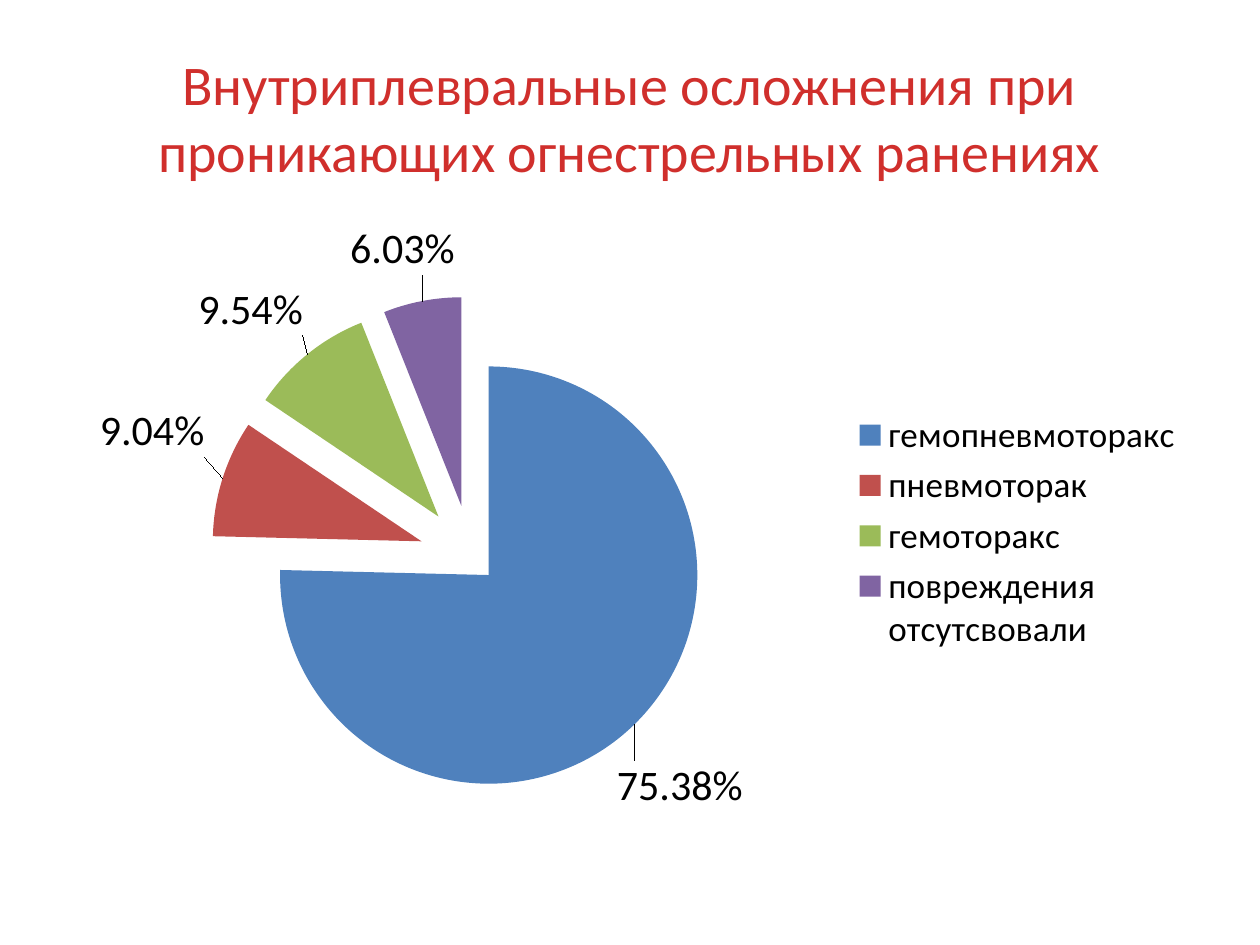
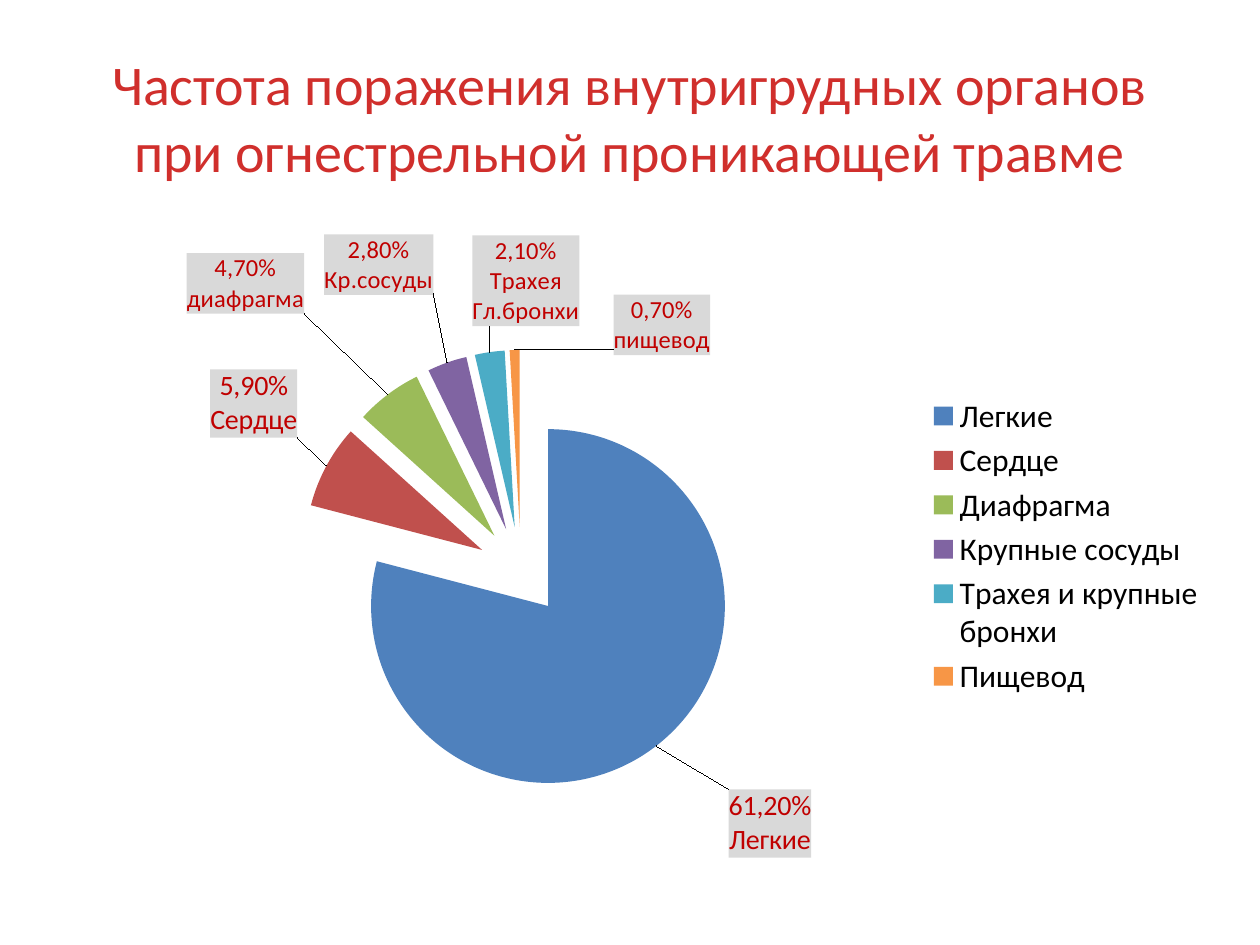
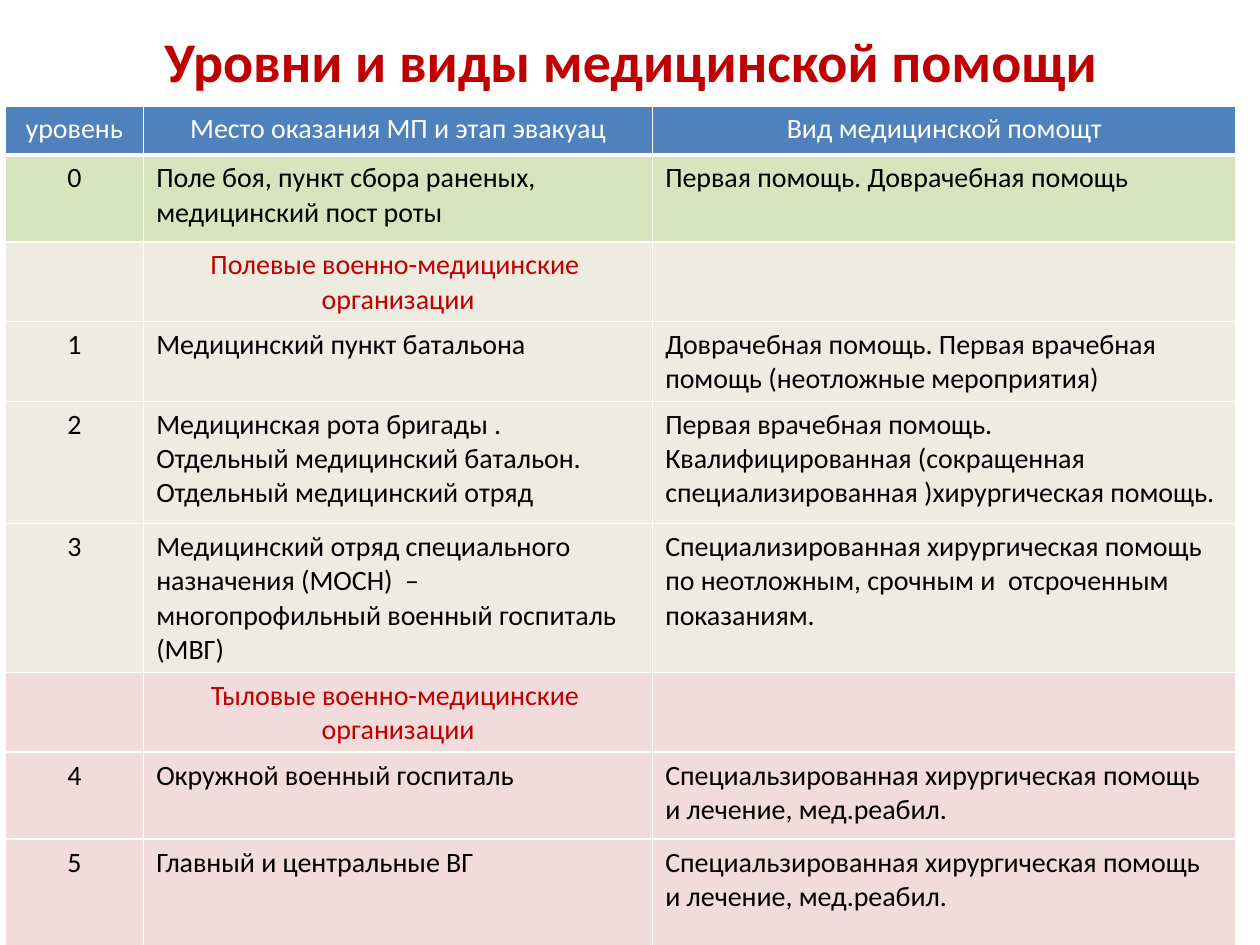
from lxml import etree
from pptx import Presentation
from pptx.chart.data import CategoryChartData
from pptx.dml.color import RGBColor
from pptx.enum.chart import XL_CHART_TYPE as ChartType
from pptx.enum.chart import XL_LABEL_POSITION as LabelPos
from pptx.enum.chart import XL_LEGEND_POSITION as LegendPos
from pptx.enum.text import MSO_ANCHOR as Anchor
from pptx.enum.text import PP_ALIGN as Align
from pptx.oxml import parse_xml
from pptx.oxml.ns import nsdecls, qn
from pptx.util import Inches, Pt

COLORS = {
    "black": "000000", "white": "FFFFFF", "title": "D02F2C", "accent": "C00000",
    "label": "D9D9D9", "header": "4F81BD", "battlefield": "D7E4BD",
    "field": "EEECE1", "rear": "F2DCDB",
}
SLICES = ["4F81BD", "C0504D", "9BBB59", "8064A2", "4BACC6", "F79646"]
FONT = "Calibri"


def rgb(name):
    return RGBColor.from_string(COLORS[name])


def layout_xml(mode="", **parts):
    """Manual chart layout; parts are fractions of the chart."""
    modes = '<c:layoutTarget val="inner"/>' if mode else ""
    modes += "".join(f'<c:{p}Mode val="{mode}"/>' for p in "xy" if mode)
    values = "".join(f'<c:{p} val="{v:.2f}"/>' for p, v in parts.items())
    return parse_xml(f'<c:layout {nsdecls("c")}><c:manualLayout>{modes}{values}'
                     "</c:manualLayout></c:layout>")


class Deck:
    """Holds the shared style and the current slide."""

    def __init__(self):
        self.prs = Presentation()
        self.prs.slide_width, self.prs.slide_height = Inches(10), Inches(7.5)
        self.slide = None

    def new_slide(self):
        self.slide = self.prs.slides.add_slide(self.prs.slide_layouts[6])

    def style(self, font, size, color="black", bold=False):
        font.name, font.size, font.bold = FONT, Pt(size), bold
        font.color.rgb = rgb(color)

    def add_text(self, paragraph, text, size, color="black", align=Align.LEFT, bold=False):
        paragraph.alignment = align
        run = paragraph.add_run()
        run.text = text
        self.style(run.font, size, color, bold)

    def title(self, text, left=0.5, top=0.3, height=1.25, color="title", bold=False):
        box = self.slide.shapes.add_textbox(
            Inches(left), Inches(top), Inches(9), Inches(height))
        frame = box.text_frame
        frame.word_wrap, frame.vertical_anchor = True, Anchor.MIDDLE
        self.add_text(frame.paragraphs[0], text, 32, color, Align.CENTER, bold)

    def pie(self, left, top, slices, plot_area, legend_size):
        """slices: (category, value, explosion, label size, label shift, label lines)."""
        data = CategoryChartData(number_format="0.00%")
        data.categories = [s[0] for s in slices]
        data.add_series("Series 1", [s[1] for s in slices])
        chart = self.slide.shapes.add_chart(
            ChartType.PIE_EXPLODED, Inches(left), Inches(top),
            Inches(9), Inches(4.95), data).chart
        chart.has_title = False
        self.style(chart.font, 18)
        chart.has_legend = True
        chart.legend.position = LegendPos.RIGHT
        chart.legend.include_in_layout = False
        self.style(chart.legend.font, legend_size)

        # Plot area
        plot = chart.plots[0]
        plot.vary_by_categories = True
        area = chart.element.find(qn("c:chart")).find(qn("c:plotArea"))
        for old in area.findall(qn("c:layout")):
            area.remove(old)
        area.insert(0, layout_xml("edge", **dict(zip("xywh", plot_area))))

        # Slices and their labels
        series = plot.series[0]
        labels = series.data_labels
        labels.show_value = True
        labels.number_format, labels.number_format_is_linked = "0.00%", False
        for i, (_, _, explosion, size, shift, lines) in enumerate(slices):
            point = series.points[i]
            point.format.fill.solid()
            point.format.fill.fore_color.rgb = RGBColor.from_string(SLICES[i])
            self.explode(series._element.xpath(f"c:dPt[c:idx/@val={i}]")[0], explosion)
            self.slice_label(series, i, size, shift, lines)

    def explode(self, point, percent):
        for old in point.findall(qn("c:explosion")):
            point.remove(old)
        explosion = parse_xml(f'<c:explosion {nsdecls("c")} val="{percent}"/>')
        point.find(qn("c:spPr")).addprevious(explosion)

    def slice_label(self, series, index, size, shift, lines):
        label = series.points[index].data_label
        label.position = LabelPos.OUTSIDE_END
        if lines:
            frame = label.text_frame
            for n, line in enumerate(lines):
                paragraph = frame.paragraphs[0] if n == 0 else frame.add_paragraph()
                self.add_text(paragraph, line, size, "accent", Align.CENTER)
        else:
            self.style(label.font, size)
        element = series._element.xpath(f".//c:dLbl[c:idx/@val={index}]")[0]
        element.find(qn("c:idx")).addnext(layout_xml(x=shift[0], y=shift[1]))
        if lines:
            for old in element.findall(qn("c:spPr")):
                element.remove(old)
            element.find(qn("c:tx")).addnext(parse_xml(
                f'<c:spPr {nsdecls("c", "a")}><a:solidFill>'
                f'<a:srgbClr val="{COLORS["label"]}"/></a:solidFill></c:spPr>'))

    def table(self, left, top, widths, heights, rows):
        """rows: (fill, text colour, texts); accent rows are section headings."""
        table = self.slide.shapes.add_table(
            len(rows), len(widths), Inches(left), Inches(top),
            Inches(sum(widths)), Inches(sum(heights))).table
        for column, width in zip(table.columns, widths):
            column.width = Inches(width)
        for r, (fill, color, texts) in enumerate(rows):
            table.rows[r].height = Inches(heights[r])
            for c, text in enumerate(texts):
                cell = table.cell(r, c)
                self.borders(cell, 3 if r == 0 else 1)
                cell.fill.solid()
                cell.fill.fore_color.rgb = rgb(fill)
                if text:
                    centred = c == 0 or color != "black"
                    self.add_text(cell.text_frame.paragraphs[0], text, 16, color,
                                  Align.CENTER if centred else Align.LEFT)

    def borders(self, cell, bottom):
        properties = cell._tc.get_or_add_tcPr()
        for side, width in zip("LRTB", (1, 1, 1, bottom)):
            line = etree.SubElement(properties, qn(f"a:ln{side}"), w=str(Pt(width)))
            fill = etree.SubElement(line, qn("a:solidFill"))
            etree.SubElement(fill, qn("a:srgbClr"), val=COLORS["white"])


def main():
    deck = Deck()

    # Slide 1: intrapleural complications
    deck.new_slide()
    deck.title("Внутриплевральные осложнения при проникающих огнестрельных ранениях")
    complications = [
        ("гемопневмоторакс", 0.7538, 12, 24, (-0.02, 0.05), None),
        ("пневмоторак", 0.0904, 25, 24, (-0.01, -0.03), None),
        ("гемоторакс", 0.0954, 25, 24, (0, -0.02), None),
        ("повреждения отсутсвовали", 0.0603, 25, 24, (0.03, -0.03), None),
    ]
    deck.pie(0.5, 1.75, complications, (0.13, 0.12, 0.46, 0.84), 20)

    # Slide 2: organs affected
    deck.new_slide()
    organs = [
        ("Легкие", 0.612, 25, 16, (0.06, 0.06), ["61,20%", "Легкие"]),
        ("Сердце", 0.059, 25, 16, (-0.02, -0.04), ["5,90%", "Сердце"]),
        ("Диафрагма", 0.047, 25, 14, (-0.07, -0.12), ["4,70%", "диафрагма"]),
        ("Крупные сосуды", 0.028, 25, 14, (-0.01, -0.1), ["2,80%", "Кр.сосуды"]),
        ("Трахея и крупные бронхи", 0.021, 25, 14, (0.08, -0.03),
         ["2,10%", "Трахея", "Гл.бронхи"]),
        ("Пищевод", 0.007, 25, 14, (0.13, 0.02), ["0,70%", "пищевод"]),
    ]
    deck.pie(0.67, 1.86, organs, (0.19, 0.18, 0.39, 0.72), 18)
    deck.title("Частота поражения внутригрудных органов при огнестрельной "
               "проникающей травме")

    # Slide 3: levels of medical care
    deck.new_slide()
    deck.title("Уровни и виды медицинской помощи", 0.51, 0.13, 0.69, "accent", True)
    rear_care = "Специальзированная хирургическая помощь  и лечение, мед.реабил."
    levels = [
        ("header", "white",
         ["уровень", "Место оказания МП и этап эвакуац", "Вид медицинской помощт"]),
        ("battlefield", "black",
         ["0", "Поле боя, пункт сбора раненых, медицинский пост роты",
          "Первая помощь. Доврачебная помощь"]),
        ("field", "accent", ["", "Полевые военно-медицинские  организации", ""]),
        ("field", "black",
         ["1", "Медицинский пункт батальона",
          "Доврачебная помощь. Первая врачебная помощь (неотложные мероприятия)"]),
        ("field", "black",
         ["2", "Медицинская рота бригады . Отдельный медицинский батальон. "
          "Отдельный медицинский отряд",
          "Первая врачебная помощь. Квалифицированная (сокращенная "
          "специализированная )хирургическая помощь."]),
        ("field", "black",
         ["3", "Медицинский отряд специального назначения (МОСН)  – "
          "многопрофильный военный госпиталь (МВГ)",
          "Специализированная хирургическая помощь по неотложным, срочным и  "
          "отсроченным показаниям."]),
        ("rear", "accent", ["", "Тыловые военно-медицинские  организации", ""]),
        ("rear", "black", ["4", "Окружной военный госпиталь", rear_care]),
        ("rear", "black", ["5", "Главный и центральные ВГ", rear_care]),
    ]
    heights = [0.39, 0.69, 0.39, 0.58, 0.97, 1.18, 0.39, 0.69, 0.98]
    deck.table(0.04, 0.84, [1.1, 4.04, 4.63], heights, levels)

    deck.prs.save("out.pptx")


if __name__ == "__main__":
    main()
